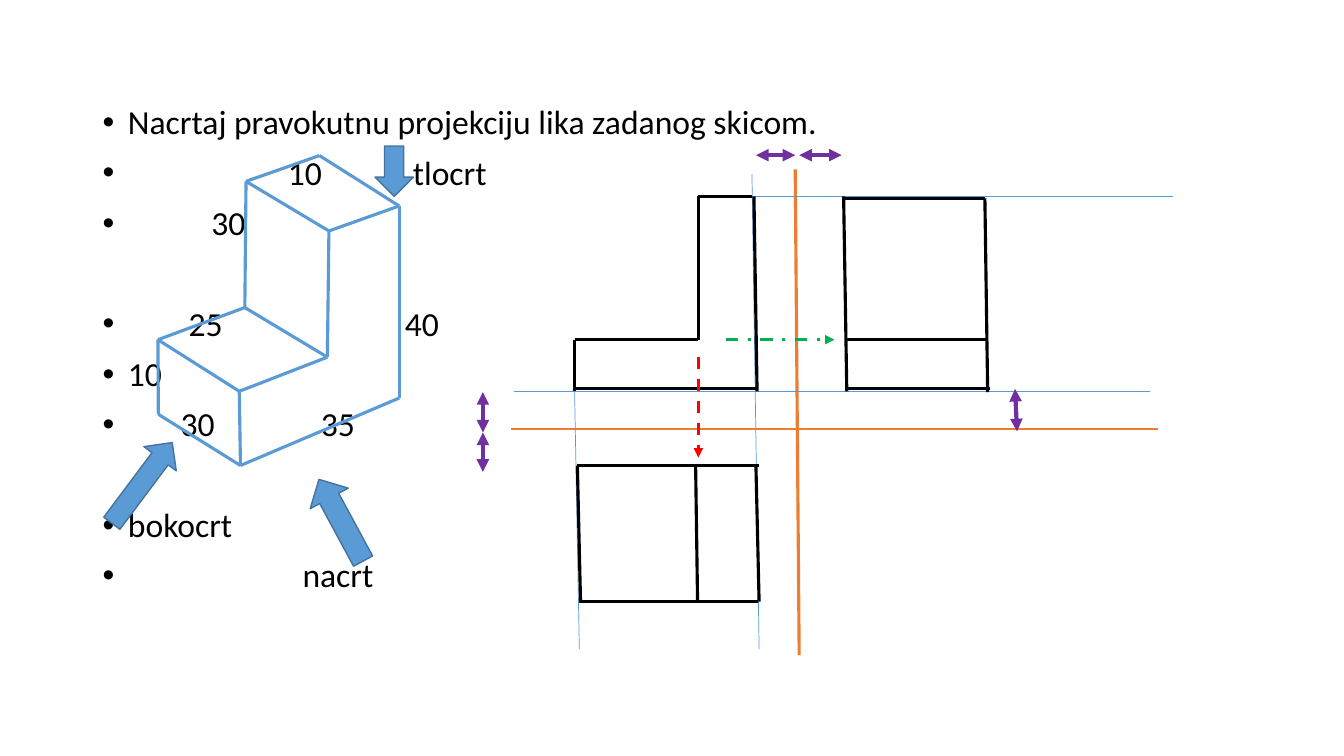
from typing import NamedTuple

import pptx
import pptx.dml.color
import pptx.enum.dml
import pptx.enum.shapes
import pptx.enum.text
import pptx.oxml
import pptx.oxml.ns
import pptx.util
from lxml import etree

Cm = pptx.util.Cm
Pt = pptx.util.Pt
RGBColor = pptx.dml.color.RGBColor
Dash = pptx.enum.dml.MSO_LINE
Preset = pptx.enum.shapes.MSO_SHAPE
qn = pptx.oxml.ns.qn

BLACK = RGBColor(0x00, 0x00, 0x00)
BLUE = RGBColor(0x5B, 0x9B, 0xD5)
DARK_BLUE = RGBColor(0x43, 0x73, 0x9E)
ORANGE = RGBColor(0xED, 0x7D, 0x31)
RED = RGBColor(0xFF, 0x00, 0x00)
GREEN = RGBColor(0x00, 0xB0, 0x50)
PURPLE = RGBColor(0x70, 0x30, 0xA0)

BULLET_INDENT = 0.64
LINE_GAP = 10
SKIPPED_ROW = 36


class Stroke(NamedTuple):
    color: RGBColor
    width: float
    dash: Dash | None = None
    head: bool = False
    tail: bool = False


class Segment(NamedTuple):
    x1: float
    y1: float
    x2: float
    y2: float


class Label(NamedTuple):
    text: str
    indent: float = BULLET_INDENT
    tab: float | None = None
    space_before: float = LINE_GAP


class ViewArrow(NamedTuple):
    preset: Preset
    left: float
    top: float
    width: float
    height: float
    rotation: float = 0


# Text rows: the indent and tab put each dimension beside its edge
LABELS = [
    Label("Nacrtaj pravokutnu projekciju lika zadanog skicom.", space_before=0),
    Label("10\ttlocrt", 4.67, 7.82),
    Label("30", 2.74),
    Label("25\t40", 2.17, 7.62, LINE_GAP + SKIPPED_ROW),
    Label("10"),
    Label("30\t35", 1.97, 5.5),
    Label("bokocrt", space_before=LINE_GAP + SKIPPED_ROW),
    Label("nacrt", 5.04),
]

# Sketch of the stepped solid: corners and the edges joining them
CORNERS = {
    "A": (3.98, 8.56), "B": (3.99, 10.44), "C": (6.06, 11.73),
    "D": (6.03, 9.86), "E": (8.25, 9), "F": (6.17, 7.75),
    "G": (6.2, 4.57), "H": (8.29, 5.82), "I": (10.06, 5.19),
    "J": (8.05, 3.92), "K": (10.06, 10.03),
}
EDGES = "DC DE CK DA AB CB EF AF EH FG HG HI IK GJ IJ".split()
SKETCH = [Segment(*CORNERS[start], *CORNERS[end]) for start, end in EDGES]

VIEW_ARROWS = [
    ViewArrow(Preset.UP_ARROW, 8.05, 11.94, 1.09, 2.34, 331.6),
    ViewArrow(Preset.RIGHT_ARROW, 2.31, 11.66, 2.54, 1.02, 306.8),
    ViewArrow(Preset.DOWN_ARROW, 9.45, 3.68, 0.97, 1.27),
]

# Projection drawing
VERTICAL_AXIS = [Segment(20.04, 4.27, 20.14, 16.51)]
HORIZONTAL_AXIS = [Segment(12.88, 10.8, 29.18, 10.8)]
GUIDES = [
    Segment(18.95, 4.39, 19.13, 16.36),
    Segment(12.95, 9.86, 28.98, 9.86),
    Segment(14.48, 9.86, 14.6, 16.36),
    Segment(18.95, 4.95, 29.57, 4.95),
]
FRONT_VIEW = [
    Segment(19, 4.95, 19.08, 9.86),
    Segment(19.08, 9.8, 14.48, 9.8),
    Segment(14.48, 8.56, 14.48, 9.86),
    Segment(14.48, 8.56, 17.6, 8.56),
    Segment(17.6, 8.56, 17.6, 4.95),
    Segment(18.95, 4.95, 17.6, 4.95),
]
TOP_VIEW = [
    Segment(14.55, 11.73, 19.13, 11.73),
    Segment(19.05, 11.73, 19.13, 15.16),
    Segment(19.1, 15.16, 14.6, 15.16),
    Segment(14.55, 11.73, 14.63, 15.16),
    Segment(17.53, 11.71, 17.58, 15.14),
]
SIDE_VIEW = [
    Segment(21.26, 4.95, 21.34, 9.86),
    Segment(21.34, 9.8, 24.94, 9.8),
    Segment(24.82, 5, 24.89, 9.88),
    Segment(21.21, 5, 24.82, 5),
    Segment(21.34, 8.56, 24.89, 8.56),
]
TO_TOP_VIEW = [Segment(17.6, 8.99, 17.6, 11.53)]
TO_SIDE_VIEW = [Segment(18.29, 8.56, 21.03, 8.56)]
EQUAL_DISTANCES = [
    Segment(12.17, 9.88, 12.17, 10.9),
    Segment(12.17, 10.9, 12.17, 11.89),
    Segment(19.05, 3.91, 20.04, 3.91),
    Segment(20.14, 3.91, 21.21, 3.91),
    Segment(25.58, 9.8, 25.63, 10.87),
]

LINEWORK = [
    (SKETCH, Stroke(BLUE, 2.25)),
    (VERTICAL_AXIS, Stroke(ORANGE, 2.25)),
    (HORIZONTAL_AXIS, Stroke(ORANGE, 1.5)),
    (GUIDES, Stroke(BLUE, 0.5)),
    (FRONT_VIEW + TOP_VIEW + SIDE_VIEW, Stroke(BLACK, 2.25)),
    (TO_TOP_VIEW, Stroke(RED, 2.25, Dash.DASH, tail=True)),
    (TO_SIDE_VIEW, Stroke(GREEN, 2.25, Dash.DASH_DOT, tail=True)),
    (EQUAL_DISTANCES, Stroke(PURPLE, 3, head=True, tail=True)),
]


def write_text(paragraph, text: str, *, size: float, color: RGBColor,
               font: str = "Calibri", indent: float = BULLET_INDENT,
               tab: float | None = None, space_before: float = 0) -> None:
    paragraph.alignment = pptx.enum.text.PP_ALIGN.LEFT
    paragraph.line_spacing = 0.9
    paragraph.space_before = Pt(space_before)
    paragraph.space_after = Pt(0)
    properties = paragraph._p.get_or_add_pPr()
    properties.set("marL", str(Cm(indent)))
    properties.set("indent", str(-Cm(indent)))
    etree.SubElement(properties, qn("a:buFont"), typeface="Arial")
    etree.SubElement(properties, qn("a:buChar"), char="•")
    if tab is not None:
        tabs = etree.SubElement(properties, qn("a:tabLst"))
        etree.SubElement(tabs, qn("a:tab"), pos=str(Cm(tab)), algn="l")
    run = paragraph.add_run()
    run.text = text
    run.font.name = font
    run.font.size = Pt(size)
    run.font.color.rgb = color


def draw_segment(slide, segment: Segment, stroke: Stroke) -> None:
    connector = slide.shapes.add_connector(
        pptx.enum.shapes.MSO_CONNECTOR.STRAIGHT, *map(Cm, segment))
    connector.line.color.rgb = stroke.color
    connector.line.width = Pt(stroke.width)
    if stroke.dash is not None:
        connector.line.dash_style = stroke.dash
    outline = connector.line._get_or_add_ln()
    for end, shown in (("a:headEnd", stroke.head), ("a:tailEnd", stroke.tail)):
        if shown:
            etree.SubElement(outline, qn(end), type="triangle")
    etree.SubElement(connector._element.spPr, qn("a:effectLst"))


def draw_view_arrow(slide, arrow: ViewArrow) -> None:
    pointer = slide.shapes.add_shape(
        arrow.preset, Cm(arrow.left), Cm(arrow.top), Cm(arrow.width), Cm(arrow.height))
    pointer.rotation = arrow.rotation
    pointer.shadow.inherit = False
    pointer.fill.solid()
    pointer.fill.fore_color.rgb = BLUE
    pointer.line.color.rgb = DARK_BLUE
    pointer.line.width = Pt(1)


def main() -> None:
    presentation = pptx.Presentation()
    presentation.slide_width, presentation.slide_height = Cm(33.87), Cm(19.05)
    slide = presentation.slides.add_slide(presentation.slide_layouts[1])
    unused_title = slide.shapes.title.element
    unused_title.getparent().remove(unused_title)

    # Task and dimension labels
    task = slide.placeholders[1]
    task.left, task.top, task.width, task.height = Cm(2.33), Cm(2.54), Cm(29.21), Cm(14.63)
    frame = task.text_frame
    frame.word_wrap = True
    frame.auto_size = pptx.enum.text.MSO_AUTO_SIZE.NONE
    frame.vertical_anchor = pptx.enum.text.MSO_ANCHOR.TOP
    for row, label in enumerate(LABELS):
        paragraph = frame.add_paragraph() if row else frame.paragraphs[0]
        write_text(paragraph, label.text, size=24, color=BLACK, indent=label.indent,
                   tab=label.tab, space_before=label.space_before)

    # Sketch and projections
    for segments, stroke in LINEWORK:
        for segment in segments:
            draw_segment(slide, segment, stroke)

    # Viewing directions
    for arrow in VIEW_ARROWS:
        draw_view_arrow(slide, arrow)

    presentation.save("out.pptx")


if __name__ == "__main__":
    main()
